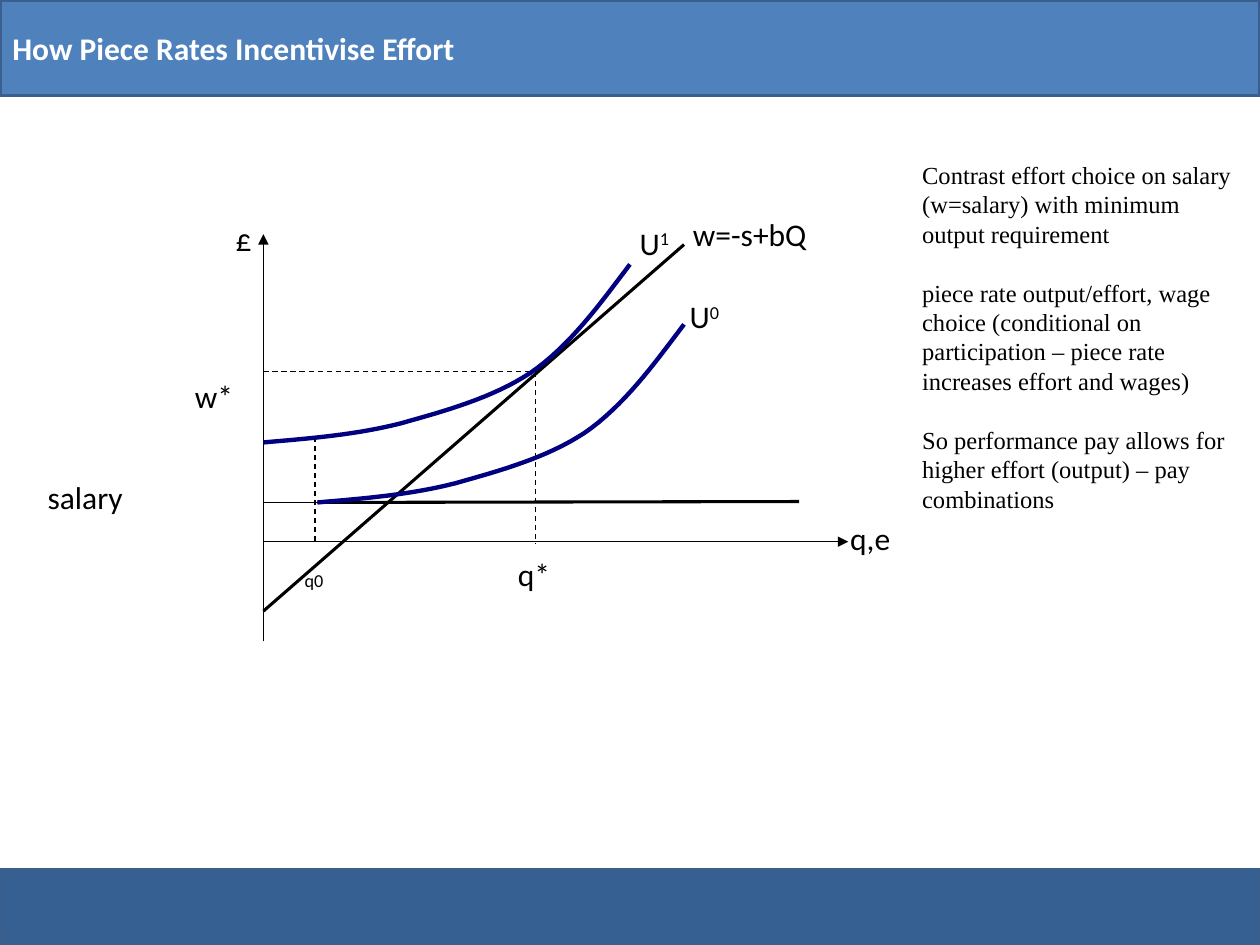
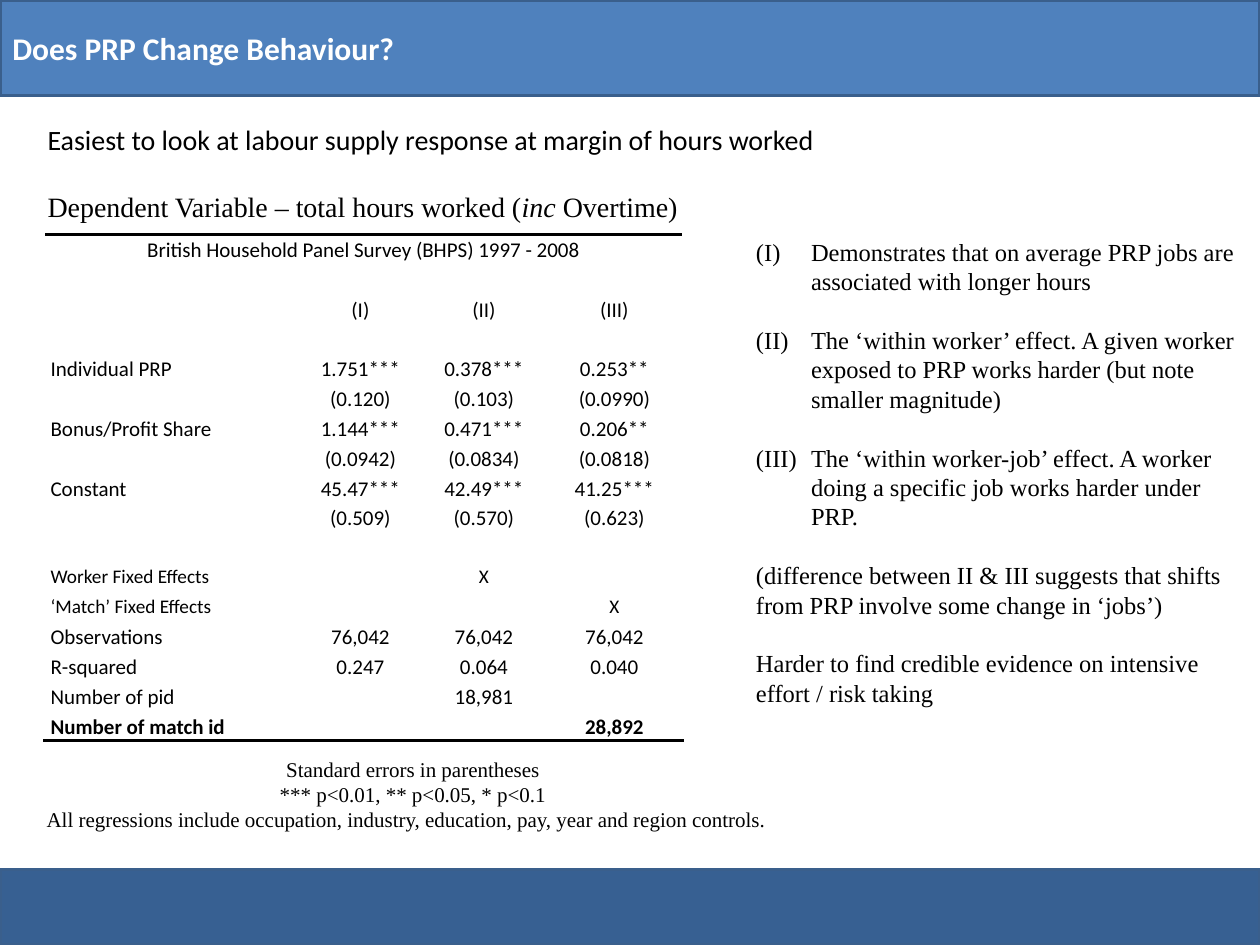
from dataclasses import dataclass

from lxml import etree
from pptx import Presentation
from pptx.dml.color import RGBColor
from pptx.enum.dml import MSO_LINE
from pptx.enum.shapes import MSO_CONNECTOR, MSO_SHAPE
from pptx.enum.text import MSO_ANCHOR, PP_ALIGN
from pptx.oxml.ns import qn
from pptx.util import Cm, Pt

LEFT, CENTER = PP_ALIGN.LEFT, PP_ALIGN.CENTER
TOP, MIDDLE = MSO_ANCHOR.TOP, MSO_ANCHOR.MIDDLE
DASH = MSO_LINE.DASH
STRAIGHT = MSO_CONNECTOR.STRAIGHT
RECTANGLE = MSO_SHAPE.RECTANGLE


@dataclass(frozen=True)
class Theme:
    """Colours, fonts and point sizes shared by the deck."""
    header: str = "4F81BD"
    footer: str = "376092"
    edge: str = "3A5F8C"
    ink: str = "000000"
    paper: str = "FFFFFF"
    curve: str = "000080"
    sans: str = "Calibri"
    serif: str = "Times New Roman"
    title: int = 18
    lead: int = 16
    note: int = 14
    small: int = 12
    tiny: int = 11
    thin: float = 0.75
    thick: float = 1.75
    bold_line: float = 2.5
    rule: float = 2


@dataclass(frozen=True)
class Box:
    """A rectangle measured in centimetres."""
    left: float
    top: float
    width: float
    height: float

    def lengths(self):
        """Return the four measures as lengths."""
        return [Cm(n) for n in (self.left, self.top, self.width, self.height)]


THEME = Theme()
HEADER = Box(0, 0, 25.4, 1.93)
FOOTER = Box(0, 17.53, 25.4, 1.52)

UTILITY_CURVE = [(0, 2), (0.94, 2.08), (1.91, 2.16), (2.79, 2.39), (3.68, 2.64),
                 (4.62, 2.9), (5.38, 3.4), (6.17, 3.94), (6.78, 4.78), (7.39, 5.59)]
CURVE_STEPS = 16
MINIMUM_OUTPUT, BEST_OUTPUT, SALARY, BEST_WAGE = 1.04, 5.49, 0.79, 3.43
GRAPH_LINES = [
    ((0, -2.01), (0, 6.2), THEME.thin, "arrow"),
    ((0, 0), (11.79, 0), THEME.thin, "arrow"),
    ((0, -1.4), (8.48, 5.99), THEME.thick, "plain"),
    ((0, SALARY), (3.78, SALARY), THEME.thin, "plain"),
    ((1.09, SALARY), (10.8, 0.81), THEME.thick, "plain"),
    ((BEST_OUTPUT, BEST_WAGE), (BEST_OUTPUT, -0.05), THEME.thin, "dash"),
    ((MINIMUM_OUTPUT, 2.11), (MINIMUM_OUTPUT, 0), THEME.thin, "dash"),
    ((0, BEST_WAGE), (BEST_OUTPUT, BEST_WAGE), THEME.thin, "dash"),
]
GRAPH_LABELS = [
    (11.58, 0.58, 2, [("q,e", 0)]),
    (-0.81, 6.6, 1.2, [("£", 0)]),
    (-4.6, 1.4, 4.8, [("salary", 0)]),
    (0.58, 0, 1.4, [("q0", -25)]),
    (7.19, 6.53, 1.6, [(" U", 0), ("1", 30)]),
    (8.2, 5.05, 1.6, [(" U", 0), ("0", 30)]),
    (4.88, -0.15, 1.4, [("q*", 0)]),
    (8.41, 6.71, 3.2, [("w=-s+bQ", 0)]),
    (-1.63, 3.45, 2.03, [("w*", 0)]),
]
EFFORT_NOTES = [
    "Contrast effort choice on salary (w=salary) with minimum output requirement",
    "piece rate output/effort, wage choice (conditional on participation – "
    "piece rate increases effort and wages)",
    "So performance pay allows for higher effort (output) – pay combinations",
]
COLUMN_WIDTHS = [5.13, 2.49, 2.49, 2.77]
RESULTS = [
    ("British Household Panel Survey (BHPS) 1997 - 2008", "", "", ""),
    ("", "", "", ""),
    ("", "(I)", "(II)", "(III)"),
    ("", "", "", ""),
    ("Individual PRP", "1.751***", "0.378***", "0.253**"),
    ("", "(0.120)", "(0.103)", "(0.0990)"),
    ("Bonus/Profit Share", "1.144***", "0.471***", "0.206**"),
    ("", "(0.0942)", "(0.0834)", "(0.0818)"),
    ("Constant", "45.47***", "42.49***", "41.25***"),
    ("", "(0.509)", "(0.570)", "(0.623)"),
    ("", "", "", ""),
    ("Worker Fixed Effects", "", "X", ""),
    ("‘Match’ Fixed Effects", "", "", "X"),
    ("Observations", "76,042", "76,042", "76,042"),
    ("R-squared", "0.247", "0.064", "0.040"),
    ("Number of pid", "", "18,981", ""),
    ("Number of match id", "", "", "28,892"),
]
FINDINGS = [
    "Demonstrates that on average PRP jobs are associated with longer hours",
    "The ‘within worker’ effect. A given worker exposed to PRP works harder "
    "(but note smaller magnitude)",
    "The ‘within worker-job’ effect. A worker doing a specific job works harder under PRP.",
]
REMARKS = [
    "(difference between II & III suggests that shifts from PRP involve some change in ‘jobs’)",
    "Harder to find credible evidence on intensive effort / risk taking",
]


def colour(code):
    """Turn a hex code into a colour."""
    return RGBColor.from_string(code)


def add_span(para, text, size, font=THEME.sans, ink=THEME.ink, bold=False, italic=False, baseline=0):
    """Add one formatted run to a paragraph."""
    span = para.add_run()
    span.text = text
    span.font.size, span.font.name = Pt(size), font
    span.font.bold, span.font.italic = bold, italic
    span.font.color.rgb = colour(ink)
    if baseline:
        span.font._element.set("baseline", str(baseline * 1000))


def add_frame(page, box, anchor=TOP):
    """Add a wrapping text box and return its frame."""
    frame = page.shapes.add_textbox(*box.lengths()).text_frame
    frame.word_wrap, frame.vertical_anchor = True, anchor
    return frame


def next_para(frame, is_first, align=LEFT, gap=0):
    """Return the next paragraph, set apart from the one before."""
    para = frame.paragraphs[0] if is_first else frame.add_paragraph()
    para.alignment = align
    para.space_before = Pt(0 if is_first else gap)
    return para


def add_band(page, box, fill):
    """Draw one full-width band."""
    band = page.shapes.add_shape(RECTANGLE, *box.lengths())
    band.shadow.inherit = False
    band.fill.solid()
    band.fill.fore_color.rgb = colour(fill)
    band.line.color.rgb, band.line.width = colour(THEME.edge), Pt(THEME.rule)
    return band


def add_page(deck, title):
    """Add a blank slide with the titled header and the footer."""
    page = deck.slides.add_slide(deck.slide_layouts[6])
    frame = add_band(page, HEADER, THEME.header).text_frame
    frame.vertical_anchor = MIDDLE
    para = next_para(frame, True)
    add_span(para, title, THEME.title, ink=THEME.paper, bold=True)
    add_band(page, FOOTER, THEME.footer)
    return page


def add_line(page, start, end, width, style):
    """Draw a plain, dashed or arrow-tipped line."""
    line = page.shapes.add_connector(STRAIGHT, *(Cm(n) for n in (*start, *end)))
    line.line.color.rgb, line.line.width = colour(THEME.ink), Pt(width)
    if style == "dash":
        line.line.dash_style = DASH
    if style == "arrow":
        etree.SubElement(line.line._get_or_add_ln(), qn("a:tailEnd"), type="triangle")
    etree.SubElement(line._element.spPr, qn("a:effectLst"))


def bezier_points(controls):
    """Sample a chain of cubic Bezier segments."""
    points = [controls[0]]
    for first in range(0, len(controls) - 1, 3):
        segment = controls[first:first + 4]
        for step in range(1, CURVE_STEPS + 1):
            t = step / CURVE_STEPS
            weights = ((1 - t) ** 3, 3 * t * (1 - t) ** 2, 3 * t ** 2 * (1 - t), t ** 3)
            points.append(tuple(sum(w * point[axis] for w, point in zip(weights, segment))
                                for axis in (0, 1)))
    return points


def add_curve(page, points):
    """Draw an open curve through the points."""
    corners = [(Cm(x), Cm(y)) for x, y in points]
    builder = page.shapes.build_freeform(*corners[0])
    builder.add_line_segments(corners[1:], close=False)
    curve = builder.convert_to_shape()
    curve.shadow.inherit = False
    curve.fill.background()
    curve.line.color.rgb, curve.line.width = colour(THEME.curve), Pt(THEME.bold_line)


def add_effort_graph(page, origin_x, origin_y):
    """Draw the wage and effort graph around its origin."""
    def place(point):
        """Map a graph point, measured upwards, to the page."""
        return origin_x + point[0], origin_y - point[1]

    for start, end, width, style in GRAPH_LINES:
        add_line(page, place(start), place(end), width, style)
    for shift_x, shift_y in ((0, 0), (1.09, -1.21)):
        controls = [place((x + shift_x, y + shift_y)) for x, y in UTILITY_CURVE]
        add_curve(page, bezier_points(controls))
    for x, y, width, spans in GRAPH_LABELS:
        para = next_para(add_frame(page, Box(*place((x, y)), width, 1.02)), True)
        for text, baseline in spans:
            add_span(para, text, THEME.title, baseline=baseline)


def add_notes(page, box, numbered, plain, anchor=TOP):
    """Write spaced notes, the numbered ones first."""
    frame = add_frame(page, box, anchor)
    for index, text in enumerate(numbered + plain):
        para = next_para(frame, index == 0, gap=16.8)
        add_span(para, text, THEME.note, THEME.serif)
        if index < len(numbered):
            properties = para._p.get_or_add_pPr()
            properties.set("marL", str(Cm(1.11)))
            properties.set("indent", str(-Cm(1.11)))
            etree.SubElement(properties, qn("a:buAutoNum"), type="romanUcParenBoth")


def add_rule(cell, side):
    """Draw a border on one side of a cell."""
    line = etree.Element(qn(f"a:{side}"), w=str(Pt(THEME.rule)))
    fill = etree.SubElement(line, qn("a:solidFill"))
    etree.SubElement(fill, qn("a:srgbClr"), val=THEME.ink)
    cell._tc.get_or_add_tcPr().insert(0, line)


def fill_cell(cell, text, align, size, bold):
    """Write and format one table cell."""
    cell.margin_left = cell.margin_right = Cm(0.13)
    cell.margin_top = cell.margin_bottom = 0
    cell.fill.solid()
    cell.fill.fore_color.rgb = colour(THEME.paper)
    para = next_para(cell.text_frame, True, align)
    para.line_spacing = 1.15
    if text:
        add_span(para, text, size, bold=bold)
    else:
        para._p.get_or_add_endParaRPr().set("sz", str(size * 100))


def add_results(page, box):
    """Build the regression table."""
    last = len(RESULTS) - 1
    table = page.shapes.add_table(len(RESULTS), len(COLUMN_WIDTHS), *box.lengths()).table
    table.first_row = table.horz_banding = False
    for column, width in zip(table.columns, COLUMN_WIDTHS):
        column.width = Cm(width)
    for row, values in enumerate(RESULTS):
        table.rows[row].height = Cm(box.height / len(RESULTS))
        size = THEME.tiny if "Fixed Effects" in values[0] else THEME.small
        for column, text in enumerate(values):
            cell = table.cell(row, column)
            align = LEFT if column == 0 and row else CENTER
            fill_cell(cell, text, align, size, row == last)
            if row in (0, last):
                add_rule(cell, "lnB" if row else "lnT")
    table.cell(0, 0).merge(table.cell(0, len(COLUMN_WIDTHS) - 1))


def add_introduction(page, box):
    """Write the lead sentence and the table heading."""
    frame = add_frame(page, box)
    add_span(next_para(frame, True), "Easiest to look at labour supply response at margin of hours worked",
             THEME.lead)
    para = next_para(frame, False, gap=19.5)
    for text in ("Dependent Variable – total hours worked (", "inc", " Overtime)"):
        add_span(para, text, THEME.lead, THEME.serif, italic=text == "inc")


def add_table_notes(page, box):
    """Write the notes under the table."""
    frame = add_frame(page, box, MIDDLE)
    notes = [("Standard errors in parentheses", CENTER),
             ("*** p<0.01, ** p<0.05, * p<0.1", CENTER),
             ("All regressions include occupation, industry, education, pay, year and region controls.", LEFT)]
    for index, (text, align) in enumerate(notes):
        add_span(next_para(frame, index == 0, align), text, THEME.small, THEME.serif)


def main():
    """Build and save the deck."""
    deck = Presentation()
    deck.slide_width, deck.slide_height = Cm(25.4), Cm(19.05)

    page = add_page(deck, "How Piece Rates Incentivise Effort")
    add_effort_graph(page, 5.31, 10.92)
    add_notes(page, Box(18.34, 3.1, 7.01, 7.44), [], EFFORT_NOTES)

    page = add_page(deck, "Does PRP Change Behaviour?")
    add_introduction(page, Box(0.71, 2.34, 22.81, 2.3))
    add_results(page, Box(0.89, 4.72, 12.88, 10.2))
    add_table_notes(page, Box(0.69, 15.11, 15.27, 1.8))
    add_notes(page, Box(14.99, 4.6, 10.21, 9.83), FINDINGS, REMARKS, MIDDLE)

    deck.save("out.pptx")


if __name__ == "__main__":
    main()
